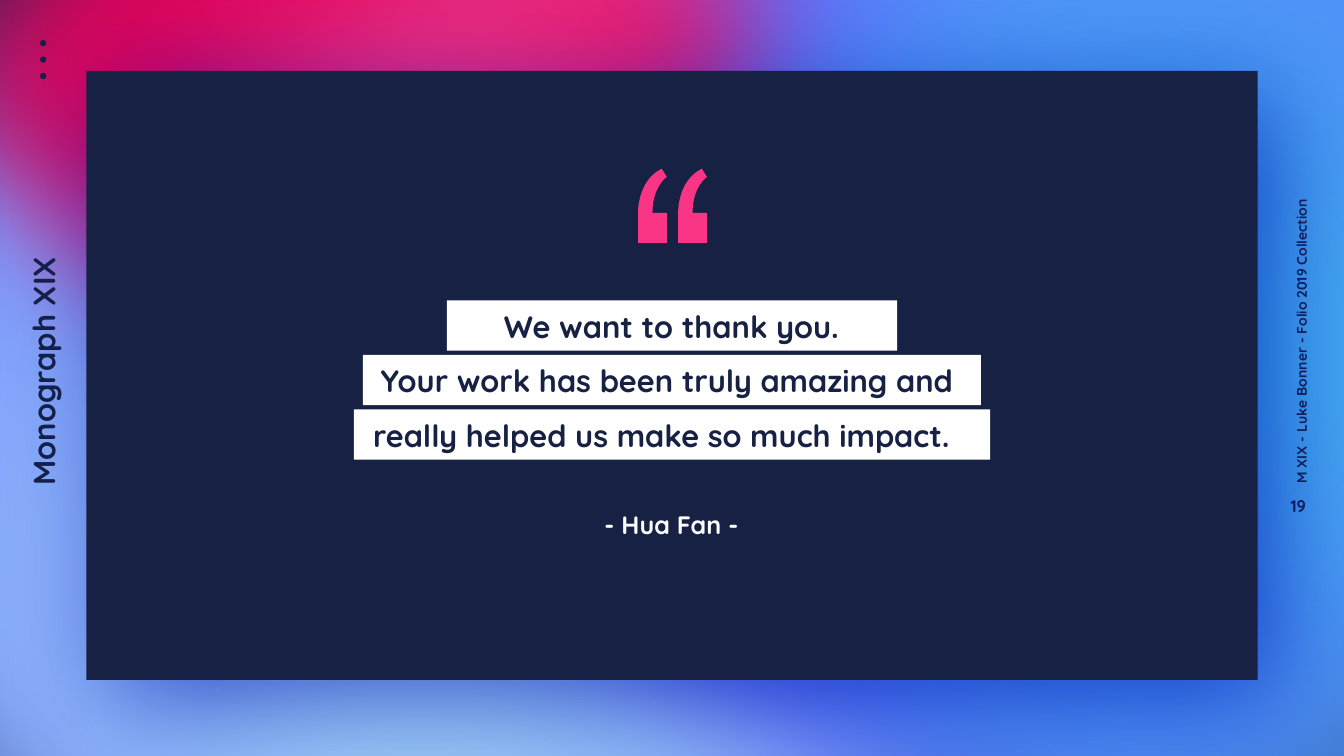
from lxml import etree
from pptx import Presentation
from pptx import util as u
from pptx.dml.color import RGBColor
from pptx.enum import shapes as sh, text as tx
from pptx.oxml.ns import qn

NAVY, PINK, WHITE = "172144", "FA3585", "FFFFFF"
ROSE, BLUE = "DE055D", "6070FF"
SOFT = u.Pt(100)

# Background blobs: start point, then three points for each curve
TEAL_PTS = [
    (-4.16, 3.98), (-4.03, 5.23), (-3.64, 6.48), (-2.91, 7.68), (-2.47, 8.42), (-1.89, 9.13),
    (-1.19, 9.76), (1.62, 12.27), (6.04, 11.51), (7.69, 10.84), (9.34, 10.16), (12.03, 8.58),
    (12.22, 6.96), (12.4, 5.34), (11.64, 4.4), (10.81, 3.66), (9.98, 2.93), (8.46, 2.05),
    (7.96, 1.8), (7.45, 1.55), (4.81, 0.33), (3.25, -0.2), (2.28, -0.54), (1.25, -0.76),
    (0.24, -0.8), (-0.23, -0.82), (-0.73, -0.81), (-1.15, -0.69), (-1.59, -0.58), (-2.01, -0.43),
    (-2.39, -0.23), (-3, 0.07), (-3.51, 0.49), (-3.81, 1.01), (-4.12, 1.55), (-4.19, 2.17),
    (-4.2, 2.78), (-4.21, 3.18), (-4.2, 3.58), (-4.16, 3.98)]
ROSE_PTS = [
    (8.65, 1.81), (8.63, 0.74), (8.44, -0.32), (8.02, -1.32), (7.76, -1.93), (7.41, -2.51),
    (6.97, -3.01), (5.21, -5.03), (2.2, -4.13), (1.05, -3.46), (-0.09, -2.78), (-1.99, -1.27),
    (-2.2, 0.14), (-2.42, 1.55), (-1.96, 2.31), (-1.44, 2.9), (-0.92, 3.49), (0.05, 4.17),
    (0.38, 4.35), (0.71, 4.54), (2.42, 5.45), (3.44, 5.82), (4.07, 6.06), (4.75, 6.19),
    (5.43, 6.17), (5.75, 6.16), (6.08, 6.13), (6.37, 6.01), (6.67, 5.88), (6.96, 5.73),
    (7.23, 5.54), (7.66, 5.24), (8.03, 4.86), (8.26, 4.39), (8.49, 3.91), (8.57, 3.37),
    (8.61, 2.84), (8.64, 2.5), (8.65, 2.15), (8.65, 1.81)]
BLUE_PTS = [
    (7.08, -5.05), (5.77, -4.26), (4.6, -3.27), (3.67, -2.03), (3.1, -1.27), (2.63, -0.43),
    (2.32, 0.48), (1.08, 4.09), (4.35, 7.17), (6, 8.11), (7.65, 9.05), (10.87, 10.32),
    (12.77, 9.58), (14.66, 8.84), (15.28, 7.72), (15.64, 6.66), (16, 5.59), (16.14, 3.91),
    (16.14, 3.37), (16.14, 2.83), (16.04, 0.06), (15.78, -1.47), (15.61, -2.42), (15.29, -3.36),
    (14.78, -4.18), (14.54, -4.57), (14.26, -4.95), (13.9, -5.23), (13.53, -5.51), (13.14, -5.76),
    (12.72, -5.96), (12.04, -6.27), (11.3, -6.45), (10.55, -6.4), (9.8, -6.35), (9.07, -6.07),
    (8.39, -5.74), (7.94, -5.53), (7.5, -5.3), (7.08, -5.05)]
PINK_PTS = [
    (1.24, 3.67), (1.86, 4.27), (2.58, 4.77), (3.4, 5.1), (3.9, 5.3), (4.43, 5.44),
    (4.98, 5.47), (7.14, 5.62), (8.36, 3.37), (8.63, 2.33), (8.9, 1.28), (9.12, -0.68),
    (8.44, -1.61), (7.75, -2.54), (7.05, -2.72), (6.41, -2.76), (5.77, -2.8), (4.82, -2.63),
    (4.53, -2.55), (4.23, -2.47), (2.73, -2.01), (1.93, -1.64), (1.43, -1.41), (0.96, -1.09),
    (0.58, -0.69), (0.4, -0.5), (0.23, -0.29), (0.14, -0.05), (0.03, 0.19), (-0.04, 0.44),
    (-0.09, 0.71), (-0.16, 1.12), (-0.16, 1.56), (-0.02, 1.96), (0.12, 2.37), (0.38, 2.72),
    (0.66, 3.05), (0.85, 3.27), (1.04, 3.47), (1.24, 3.67)]
CYAN_PTS = [(x + 2.63, y + 1.49) for x, y in BLUE_PTS]

BLOBS = [
    (TEAL_PTS, [(0, "B1E9F9", 100), (77, BLUE, 100)]),
    (ROSE_PTS, [(0, ROSE, 100), (40, ROSE, 100), (71, BLUE, 100)]),
    (BLUE_PTS, [(0, BLUE, 100), (100, BLUE, 100)]),
    (PINK_PTS, [(0, PINK, 100), (70, ROSE, 100)]),
    (CYAN_PTS, [(0, "3BC8F1", 100), (80, BLUE, 32)])]

# Quotation mark: curves begin at the fourth and eighth steps
MARK_PTS = [
    (0.28, 0.44), (0.28, 0.73), (0, 0.73), (0, 0.44), (0, 0.44), (-0.01, 0.13),
    (0.23, 0.01), (0.28, 0.09), (0.28, 0.09), (0.14, 0.18), (0.14, 0.44)]
MARK_BENDS = (3, 7)


def tint(fill, color):
    fill.solid()
    fill.fore_color.rgb = RGBColor.from_string(color)


def plain(shape, color):
    shape.shadow.inherit = False
    tint(shape.fill, color)
    shape.line.fill.background()
    return shape


def node(parent, tag, **attrs):
    return etree.SubElement(parent, qn("a:" + tag), {k: str(v) for k, v in attrs.items()})


def shade(parent, color, alpha):
    tone = node(parent, "srgbClr", val=color)
    if alpha < 100:
        node(tone, "alpha", val=alpha * 1000)


def effects(shape):
    return shape._element.spPr.find(qn("a:effectLst"))


def block(slide, kind, box, color):
    return plain(slide.shapes.add_shape(kind, *map(u.Inches, box)), color)


def outline(slide, pts, bends, color):
    """Closed outline; each step listed in bends starts a curve of three points."""
    first, *rest = [(u.Inches(x), u.Inches(y)) for x, y in pts]
    form = slide.shapes.build_freeform(*first, scale=1.0)
    form.add_line_segments(rest, close=True)
    shape = form.convert_to_shape()
    steps = list(shape._element.iter(qn("a:lnTo")))
    for n in bends:
        curve = etree.Element(qn("a:cubicBezTo"))
        steps[n].addprevious(curve)
        for step in steps[n:n + 3]:
            curve.append(step[0])
            step.getparent().remove(step)
    return plain(shape, color)


def blob(slide, pts, stops):
    shape = outline(slide, pts, range(0, len(pts) - 1, 3), BLUE)
    node(effects(shape), "softEdge", rad=SOFT)
    if len({color for _, color, _ in stops}) == 1:
        return
    grad = etree.Element(qn("a:gradFill"), rotWithShape="1")
    row = node(grad, "gsLst")
    for pos, color, alpha in stops:
        shade(node(row, "gs", pos=pos * 1000), color, alpha)
    mid = dict.fromkeys("ltrb", 50000)
    node(node(grad, "path", path="circle"), "fillToRect", **mid)
    props = shape._element.spPr
    props.replace(props.find(qn("a:solidFill")), grad)


def label(slide, box, words, size, color=NAVY, align="CENTER", turn=0, anchor="TOP",
          wrap=False, pad=0.1):
    area = slide.shapes.add_textbox(*map(u.Inches, box))
    area.rotation = turn
    frame = area.text_frame
    look = {"word_wrap": wrap, "vertical_anchor": getattr(tx.MSO_ANCHOR, anchor),
            "margin_left": u.Inches(pad), "margin_right": u.Inches(pad)}
    for key, val in look.items():
        setattr(frame, key, val)
    par = frame.paragraphs[0]
    par.alignment = getattr(tx.PP_ALIGN, align)
    run = par.add_run()
    run.text = words
    for key, val in {"name": "Quicksand", "size": u.Pt(size), "bold": True}.items():
        setattr(run.font, key, val)
    run.font.color.rgb = RGBColor.from_string(color)


def margins(slide, wide):
    # Dots and title on the left
    for n in range(3):
        block(slide, sh.MSO_SHAPE.OVAL, (0.39, 0.39 + 0.16 * n, 0.06, 0.06), NAVY)
    label(slide, (-0.82, 3.38, 2.48, 0.46), "Monograph XIX", 21.6, turn=270, wrap=True)
    # Page number and folio on the right
    label(slide, (wide - 0.54, 4.76, 0.19, 0.31), "19", 11.8, anchor="MIDDLE", pad=0)
    label(slide, (wide - 1.94, 3.14, 3.05, 0.27), "M XIX - Luke Bonner - Folio 2019 Collection",
          9.8, align="LEFT", turn=270, anchor="MIDDLE")


def panel(slide, box):
    card = block(slide, sh.MSO_SHAPE.RECTANGLE, box, NAVY)
    glow = node(effects(card), "outerShdw", blurRad=u.Pt(84), dist=u.Pt(24),
                dir=45 * 60000, algn="tl", rotWithShape=0)
    shade(glow, "0012B0", 66)


def quote(slide, box):
    left, top, wide, _ = box
    mid = left + wide / 2
    # Quotation mark
    for x in (mid - 0.33, mid + 0.06):
        pts = [(x + a, top + 0.94 + b) for a, b in MARK_PTS]
        outline(slide, pts, MARK_BENDS, PINK)
    # Lines on white strips: strip width, text left, text width
    lines = [("We want to thank you.", 4.38, 4.8, 3.46, "CENTER"),
             ("Your work has been truly amazing and", 6.01, 3.53, 5.91, "CENTER"),
             ("really helped us make so much impact.", 6.19, 3.53, 6.01, "LEFT")]
    for n, (words, strip, x, span, align) in enumerate(lines):
        y = top + 2.23 + 0.53 * n
        block(slide, sh.MSO_SHAPE.RECTANGLE, (mid - strip / 2, y, strip, 0.49), WHITE)
        label(slide, (x, y + 0.02, span, 0.46), words, 21.6, align=align)
    # Author
    label(slide, (mid - 0.77, top + 4.21, 1.53, 0.4), "- Hua Fan -", 17.6, WHITE)


def main():
    deck = Presentation()
    wide = 13.07
    deck.slide_width, deck.slide_height = u.Inches(wide), u.Inches(7.35)
    slide = deck.slides.add_slide(deck.slide_layouts[6])
    tint(slide.background.fill, NAVY)
    for pts, stops in BLOBS:
        blob(slide, pts, stops)
    margins(slide, wide)
    card = (0.84, 0.69, 11.39, 5.92)
    panel(slide, card)
    quote(slide, card)
    deck.save("out.pptx")


if __name__ == "__main__":
    main()
